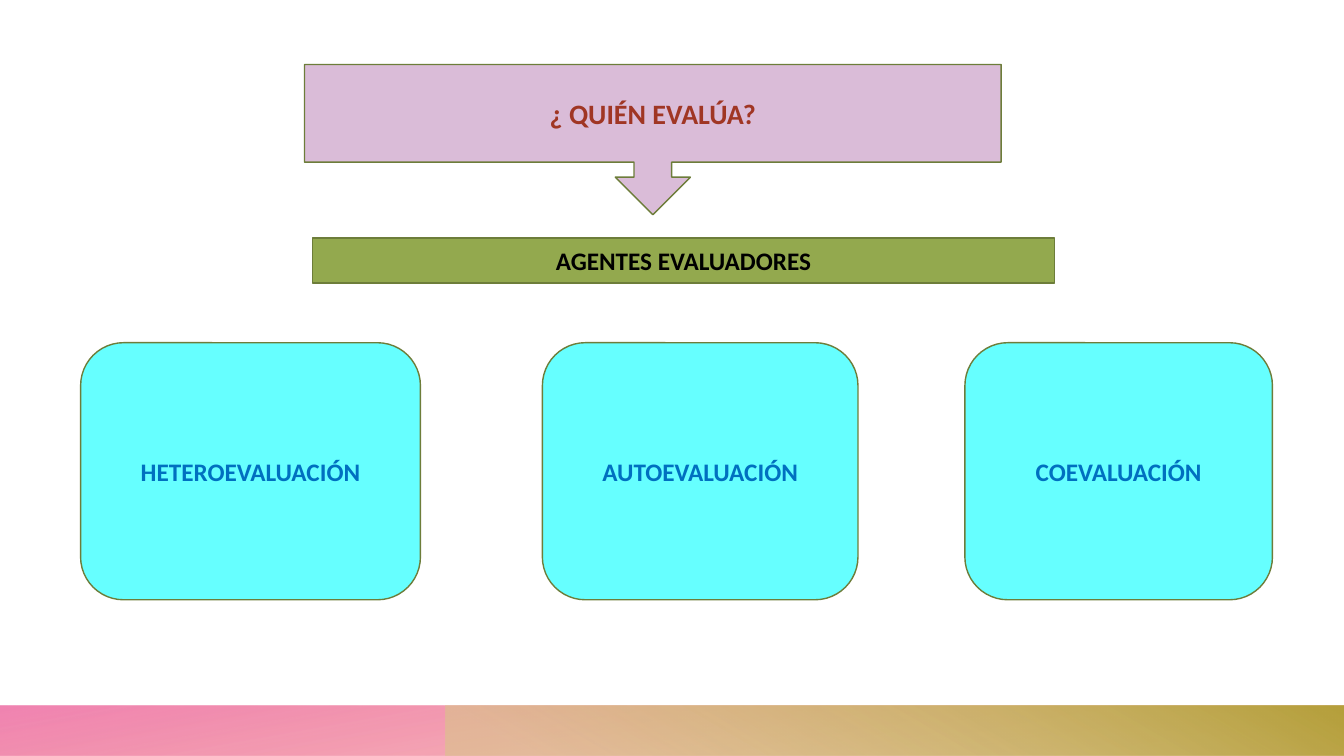
from lxml.etree import SubElement
from pptx import Presentation
from pptx.dml.color import RGBColor
from pptx.enum.shapes import MSO_SHAPE as Shape
from pptx.enum.text import MSO_ANCHOR as Anchor, PP_ALIGN as Align
from pptx.oxml.ns import qn
from pptx.util import Inches, Pt

OUTLINE = RGBColor(0x6D, 0x7D, 0x3A)
LILAC = RGBColor(0xDA, 0xBC, 0xD8)
BRICK = RGBColor(0xA0, 0x36, 0x24)
GREEN = RGBColor(0x93, 0xA9, 0x4E)
BLACK = RGBColor(0x00, 0x00, 0x00)
CYAN = RGBColor(0x66, 0xFF, 0xFF)
BLUE = RGBColor(0x00, 0x70, 0xC0)
CORAL = RGBColor(0xEB, 0x4E, 0x4F)
PINK = RGBColor(0xEE, 0x6E, 0xA5)
SAND = RGBColor(0xD7, 0xC9, 0x86)
GOLD = RGBColor(0xB6, 0xA0, 0x3C)

SLIDE_W, SLIDE_H = 13.33, 7.5


def add_block(slide, kind, box):
    block = slide.shapes.add_shape(kind, *(Inches(v) for v in box))
    block.shadow.inherit = False
    return block


def write(block, text, size=18, color=BLACK, bold=True, font="Calibri"):
    frame = block.text_frame
    frame.word_wrap = True
    frame.vertical_anchor = Anchor.MIDDLE
    paragraph = frame.paragraphs[0]
    paragraph.alignment = Align.CENTER
    run = paragraph.add_run()
    run.text = text
    run.font.name = font
    run.font.size = Pt(size)
    run.font.bold = bold
    run.font.color.rgb = color


def add_label(slide, kind, box, text, fill, **text_format):
    label = add_block(slide, kind, box)
    label.fill.solid()
    label.fill.fore_color.rgb = fill
    label.line.color.rgb = OUTLINE
    label.line.width = Pt(1)
    write(label, text, **text_format)


def add_band(slide, box, angle, stops):
    """Each stop is (position, colour, opacity in percent)."""
    band = add_block(slide, Shape.RECTANGLE, box)
    band.line.fill.background()
    band.fill.gradient()
    band.fill.gradient_angle = angle
    for stop, (position, color, _) in zip(band.fill.gradient_stops, stops):
        stop.position = position
        stop.color.rgb = color
    # Opacity of each stop
    tints = band.element.spPr.find(qn("a:gradFill")).iter(qn("a:srgbClr"))
    for tint, (_, _, opacity) in zip(tints, stops):
        SubElement(tint, qn("a:alpha")).set("val", str(opacity * 1000))


def add_footer(slide, left, top, width, height):
    gold_left = left + 4.42
    add_band(slide, (left, top, width, height), 100,
             [(0.14, CORAL, 28), (1, PINK, 85)])
    add_band(slide, (gold_left, top, left + width - gold_left, height), 60,
             [(0.09, SAND, 55), (0.99, GOLD, 100)])


def add_heading(slide, left, top, width, height):
    # Question with its arrow, then the answer below it
    add_label(slide, Shape.DOWN_ARROW_CALLOUT, (left, top, width, height),
              "¿ QUIÉN EVALÚA?", LILAC, size=20, color=BRICK)
    add_label(slide, Shape.RECTANGLE,
              (left + 0.08, top + height + 0.23, width + 0.45, 0.45),
              "AGENTES EVALUADORES", GREEN)


def add_agents(slide, left, top, height):
    agents = [("HETEROEVALUACIÓN", 0, 3.37),
              ("AUTOEVALUACIÓN", 4.58, 3.13),
              ("COEVALUACIÓN", 8.77, 3.05)]
    for agent, offset, width in agents:
        add_label(slide, Shape.ROUNDED_RECTANGLE,
                  (left + offset, top, width, height), agent, CYAN, color=BLUE)


def main():
    deck = Presentation()
    deck.slide_width = Inches(SLIDE_W)
    deck.slide_height = Inches(SLIDE_H)
    slide = deck.slides.add_slide(deck.slide_layouts[6])
    add_footer(slide, 0, SLIDE_H - 0.5, SLIDE_W, 0.5)
    add_heading(slide, 3.02, 0.64, 6.91, 1.49)
    add_agents(slide, 0.8, 3.4, 2.55)
    deck.save("out.pptx")


if __name__ == "__main__":
    main()
